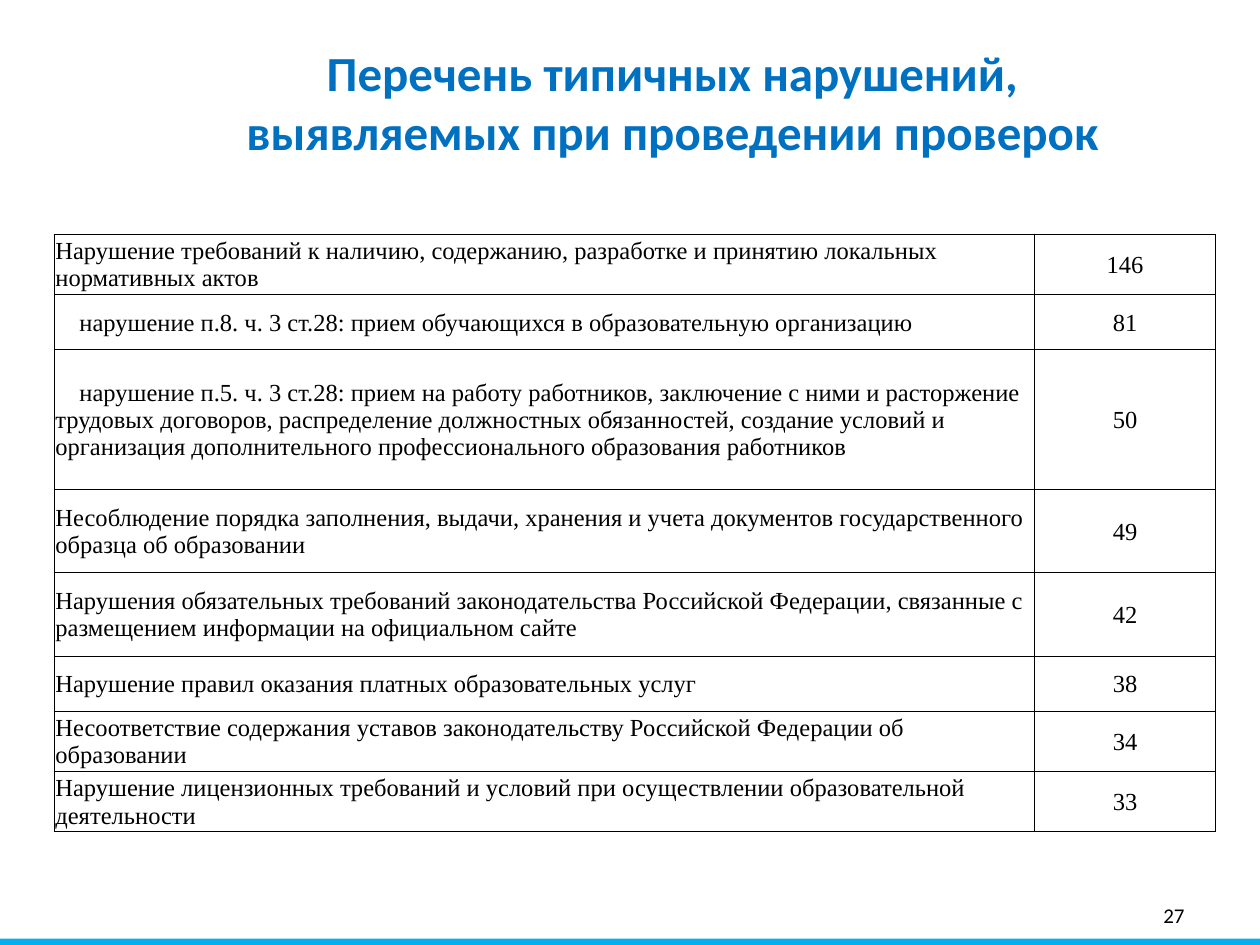
from lxml import etree
from pptx import Presentation
from pptx.dml.color import RGBColor
from pptx.enum.shapes import MSO_SHAPE
from pptx.enum.text import MSO_ANCHOR, PP_ALIGN
from pptx.oxml.ns import qn
from pptx.util import Inches, Pt

LEFT, CENTER, RIGHT = PP_ALIGN.LEFT, PP_ALIGN.CENTER, PP_ALIGN.RIGHT
TOP, MIDDLE = MSO_ANCHOR.TOP, MSO_ANCHOR.MIDDLE
RECTANGLE = MSO_SHAPE.RECTANGLE

BLACK = RGBColor(0x00, 0x00, 0x00)
BLUE = RGBColor(0x00, 0x70, 0xC0)
SKY = RGBColor(0x00, 0xB0, 0xF0)

COLUMN_WIDTHS = (7.78, 1.44)
FIRST_LINE_INDENT = Inches(0.19)

# Each row: height, text, count, whether the first line is indented
VIOLATIONS = [
    (0.44, "Нарушение требований к наличию, содержанию, разработке и принятию "
           "локальных нормативных актов", 146, False),
    (0.44, "нарушение п.8. ч. 3 ст.28: прием обучающихся в образовательную "
           "организацию", 81, True),
    (1.11, "нарушение п.5. ч. 3 ст.28: прием на работу работников, заключение с "
           "ними и расторжение трудовых договоров, распределение должностных "
           "обязанностей, создание условий и организация дополнительного "
           "профессионального образования работников", 50, True),
    (0.66, "Несоблюдение порядка заполнения, выдачи, хранения и учета документов "
           "государственного образца об образовании", 49, False),
    (0.66, "Нарушения обязательных требований законодательства Российской "
           "Федерации, связанные с размещением информации на официальном сайте",
     42, False),
    (0.44, "Нарушение правил оказания платных образовательных услуг", 38, False),
    (0.44, "Несоответствие содержания уставов законодательству Российской "
           "Федерации об образовании", 34, False),
    (0.44, "Нарушение лицензионных требований и условий при осуществлении "
           "образовательной деятельности", 33, False),
]


def style_paragraph(p, name, size, color, align, bold=False):
    """Set the alignment and font of a paragraph."""
    p.alignment = align
    p.font.name = name
    p.font.size = Pt(size)
    p.font.color.rgb = color
    p.font.bold = bold


def add_text(slide, box, text, size, color, align, anchor, bold=False):
    """Add a wrapped one-paragraph text box."""
    tf = slide.shapes.add_textbox(*box).text_frame
    tf.word_wrap = True
    tf.vertical_anchor = anchor
    tf.text = text
    style_paragraph(tf.paragraphs[0], "Calibri", size, color, align, bold)


def add_bottom_bar(slide, box):
    """Add the plain coloured bar along the bottom edge."""
    sp = slide.shapes.add_shape(RECTANGLE, *box)
    sp.shadow.inherit = False
    sp.fill.solid()
    sp.fill.fore_color.rgb = SKY
    sp.line.fill.background()


def set_borders(cell):
    """Draw a thin black line on every side of a cell."""
    tc_pr = cell._tc.get_or_add_tcPr()
    for i, side in enumerate(("a:lnL", "a:lnR", "a:lnT", "a:lnB")):
        ln = etree.Element(qn(side), w=str(Pt(0.5)))
        fill = etree.SubElement(ln, qn("a:solidFill"))
        etree.SubElement(fill, qn("a:srgbClr"), val=str(BLACK))
        tc_pr.insert(i, ln)


def fill_cell(cell, text, align):
    """Write one table cell with its margins, font and borders."""
    cell.text = text
    cell.vertical_anchor = MIDDLE
    cell.margin_left = cell.margin_right = cell.margin_top = Inches(0.01)
    cell.margin_bottom = 0
    cell.fill.background()
    style_paragraph(cell.text_frame.paragraphs[0], "Times New Roman", 14, BLACK, align)
    set_borders(cell)


def add_violations_table(slide, box):
    """Add the table of violations and their counts."""
    table = slide.shapes.add_table(len(VIOLATIONS), len(COLUMN_WIDTHS), *box).table
    table.first_row = table.horz_banding = False
    for column, width in zip(table.columns, COLUMN_WIDTHS):
        column.width = Inches(width)
    for i, (height, text, count, indented) in enumerate(VIOLATIONS):
        table.rows[i].height = Inches(height)
        name_cell = table.cell(i, 0)
        fill_cell(name_cell, text, LEFT)
        fill_cell(table.cell(i, 1), str(count), CENTER)
        if indented:
            p_pr = name_cell.text_frame.paragraphs[0]._p.get_or_add_pPr()
            p_pr.set("indent", str(FIRST_LINE_INDENT))


def main():
    """Build the slide and save it."""
    prs = Presentation()
    prs.slide_width, prs.slide_height = Inches(10), Inches(7.5)
    slide = prs.slides.add_slide(prs.slide_layouts[6])
    add_bottom_bar(slide, (0, Inches(7.45), Inches(10), Inches(0.05)))
    add_text(slide, (Inches(7.17), Inches(7.06), Inches(2.33), Inches(0.4)),
             "27", 12, BLACK, RIGHT, MIDDLE)
    add_text(slide, (Inches(1.73), Inches(0.29), Inches(7.21), Inches(1.04)),
             "Перечень типичных нарушений, выявляемых при проведении проверок",
             28, BLUE, CENTER, TOP, bold=True)
    add_violations_table(
        slide, (Inches(0.43), Inches(1.86), Inches(9.21), Inches(4.75)))
    prs.save("out.pptx")


if __name__ == "__main__":
    main()
